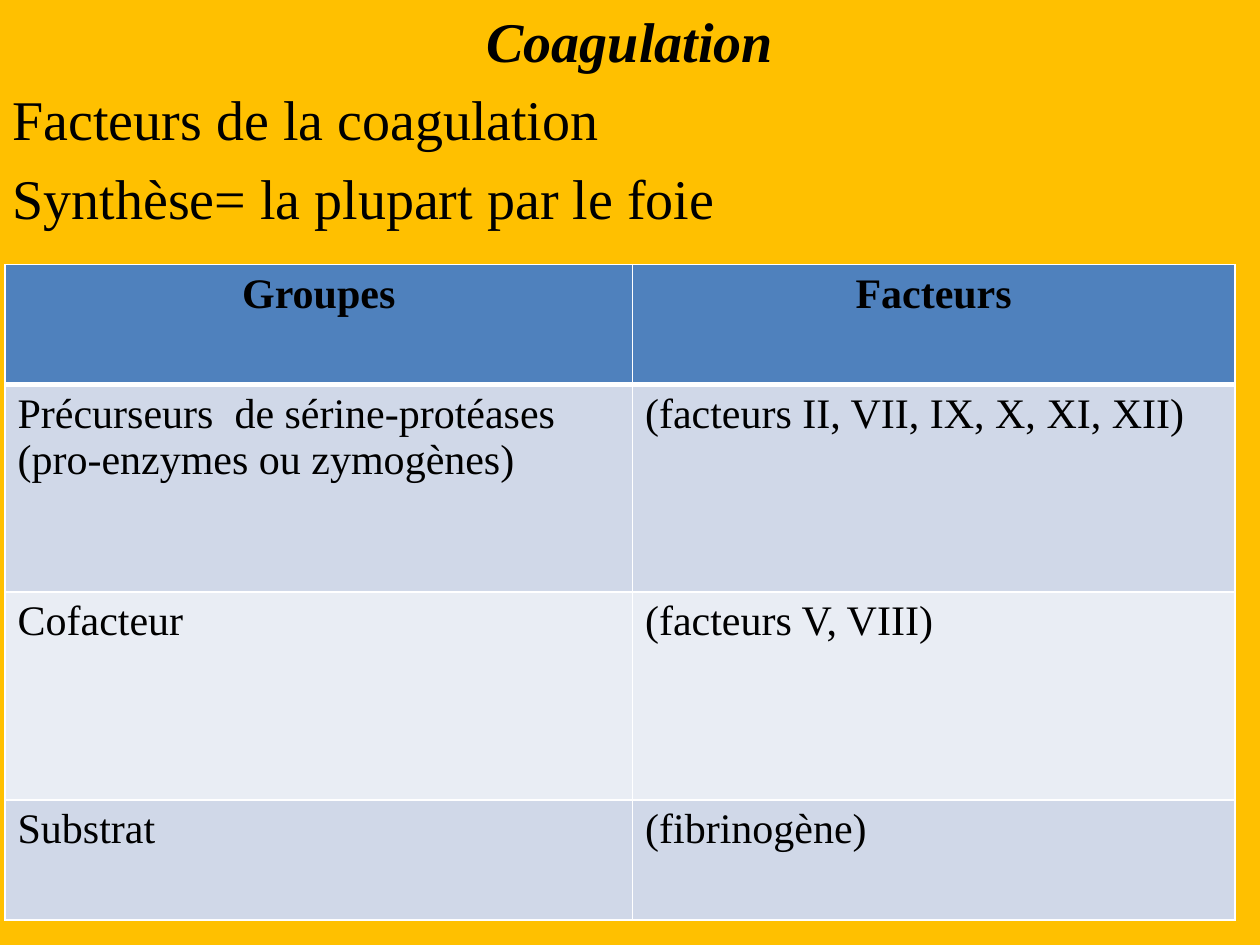
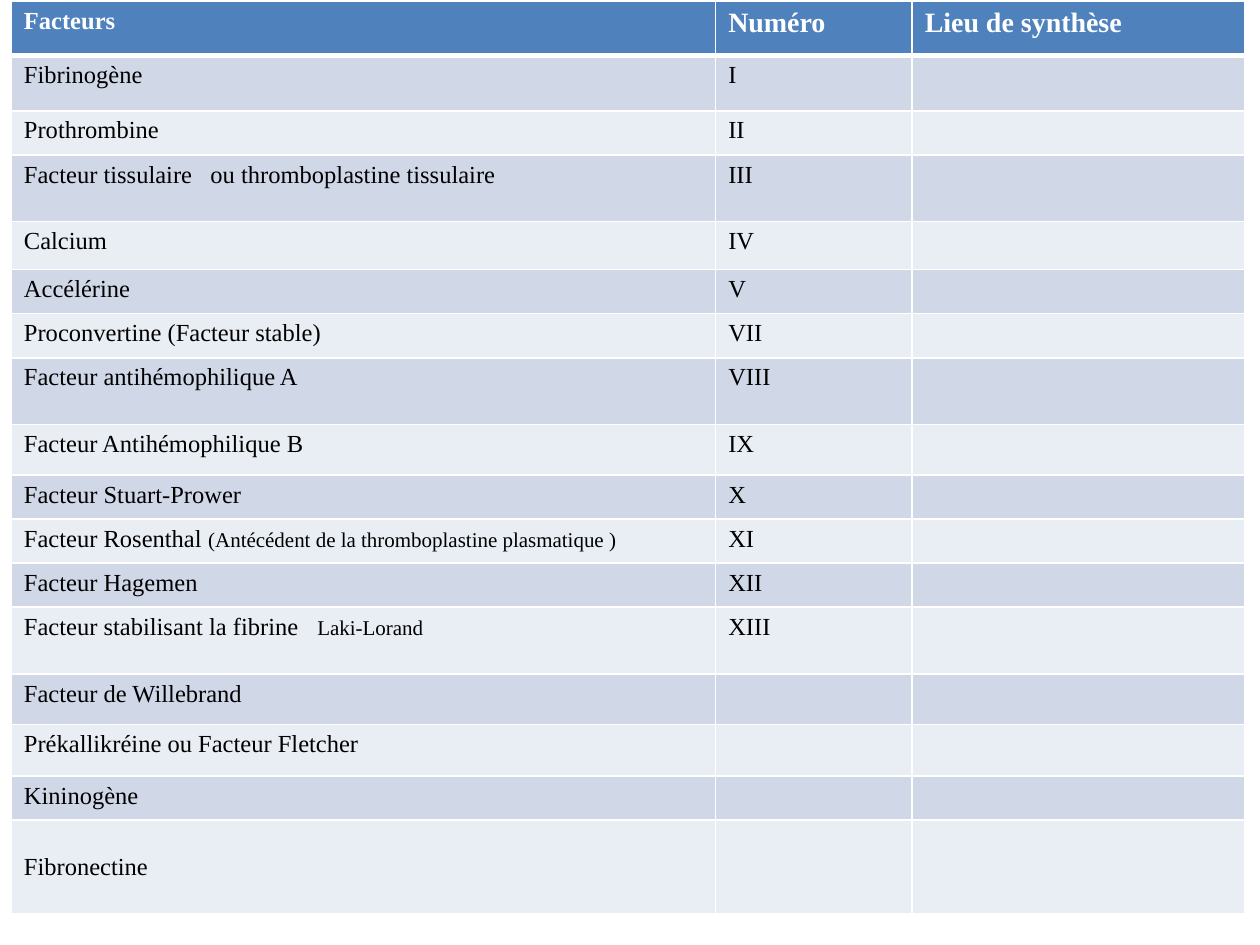
from dataclasses import dataclass

from lxml import etree
from pptx import Presentation
from pptx.dml.color import RGBColor
from pptx.enum import text
from pptx.oxml import ns
from pptx.util import Inches, Pt

# Shared style
FONT = "Times New Roman"
BLACK, WHITE, GOLD = "000000", "FFFFFF", "FFC000"
HEADER_FILL = "4F81BD"
BAND_FILLS = ("D0D8E8", "E9EDF4")
LEFT, CENTER = text.PP_ALIGN.LEFT, text.PP_ALIGN.CENTER


@dataclass(frozen=True)
class Run:
    text: str
    size: int
    bold: bool = False
    italic: bool = False
    color: str = BLACK


@dataclass(frozen=True)
class Cell:
    paragraphs: tuple[tuple[Run, ...], ...] = ()
    align: text.PP_ALIGN = LEFT
    middle: bool = False


@dataclass(frozen=True)
class TableSpec:
    left: float
    top: float
    columns: tuple[float, ...]
    row_heights: tuple[float, ...]
    rows: list[list[Cell]]


def rgb(value: str) -> RGBColor:
    return RGBColor.from_string(value)


def add_runs(paragraph, runs: tuple[Run, ...], align: text.PP_ALIGN) -> None:
    paragraph.alignment = align
    for item in runs:
        run = paragraph.add_run()
        run.text = item.text
        font = run.font
        font.name, font.size = FONT, Pt(item.size)
        font.bold, font.italic = item.bold, item.italic
        font.color.rgb = rgb(item.color)


def set_borders(cell, bottom_width: int) -> None:
    """White lines on all four sides; they come before the fill in tcPr."""
    properties = cell._tc.get_or_add_tcPr()
    widths = {"lnL": 1, "lnR": 1, "lnT": 1, "lnB": bottom_width}
    for index, (side, width) in enumerate(widths.items()):
        line = etree.Element(ns.qn(f"a:{side}"), w=str(Pt(width)))
        fill = etree.SubElement(line, ns.qn("a:solidFill"))
        etree.SubElement(fill, ns.qn("a:srgbClr"), val=WHITE)
        properties.insert(index, line)


def fill_cell(cell, content: Cell, row: int) -> None:
    cell.fill.solid()
    cell.fill.fore_color.rgb = rgb(BAND_FILLS[(row - 1) % 2] if row else HEADER_FILL)
    # The row below a header starts on a thick line
    set_borders(cell, 1 if row else 3)
    if content.middle:
        cell.vertical_anchor = text.MSO_ANCHOR.MIDDLE
    frame = cell.text_frame
    for index, runs in enumerate(content.paragraphs):
        paragraph = frame.add_paragraph() if index else frame.paragraphs[0]
        add_runs(paragraph, runs, content.align)
    if not content.paragraphs:
        # Small text size keeps an empty cell from stretching its row
        etree.SubElement(frame.paragraphs[0]._p, ns.qn("a:endParaRPr"), sz="1400")


def add_table(slide, spec: TableSpec) -> None:
    frame = slide.shapes.add_table(
        len(spec.rows), len(spec.columns), Inches(spec.left), Inches(spec.top),
        Inches(sum(spec.columns)), Inches(sum(spec.row_heights)))
    table = frame.table
    for column, width in zip(table.columns, spec.columns):
        column.width = Inches(width)
    for row, height in zip(table.rows, spec.row_heights):
        row.height = Inches(height)
    for row_index, row in enumerate(spec.rows):
        for column_index, content in enumerate(row):
            fill_cell(table.cell(row_index, column_index), content, row_index)


# Slide 1: groups of coagulation factors
INTRODUCTION = (
    (Run("Coagulation", 32, bold=True, italic=True), CENTER),
    (Run("Facteurs de la coagulation", 32), LEFT),
    (Run("Synthèse= la plupart par le foie", 32), LEFT),
)
GROUPS = (
    (("Précurseurs  de sérine-protéases", "(pro-enzymes ou zymogènes)"),
     ("(facteurs II, VII, IX, X, XI, XII)",)),
    (("Cofacteur",), ("(facteurs V, VIII)",)),
    (("Substrat",), ("(fibrinogène)",)),
)


def build_groups_slide(presentation) -> None:
    slide = presentation.slides.add_slide(presentation.slide_layouts[1])
    title = slide.shapes.title
    title.element.getparent().remove(title.element)

    # Body list on a full-slide gold ground
    body = slide.placeholders[1]
    body.left, body.top = Inches(0), Inches(0)
    body.width, body.height = presentation.slide_width, presentation.slide_height
    body.fill.solid()
    body.fill.fore_color.rgb = rgb(GOLD)
    frame = body.text_frame
    frame.auto_size = text.MSO_AUTO_SIZE.NONE
    for index, (run, align) in enumerate(INTRODUCTION):
        paragraph = frame.add_paragraph() if index else frame.paragraphs[0]
        add_runs(paragraph, (run,), align)
        properties = paragraph._p.get_or_add_pPr()
        properties.set("marL", "0")
        properties.set("indent", "0")
        etree.SubElement(properties, ns.qn("a:buNone"))

    # Table of groups
    header = [Cell(((Run(label, 24, bold=True),),), CENTER)
              for label in ("Groupes", "Facteurs")]
    rows = [[Cell(tuple((Run(line, 24),) for line in lines)) for lines in group]
            for group in GROUPS]
    add_table(slide, TableSpec(0.04, 2.1, (4.98, 4.78), (0.95, 1.65, 1.65, 0.95),
                               [header, *rows]))


# Slide 2: factor name, small remark, number, row height
FACTORS = (
    ("Fibrinogène", "", "I", 0.44),
    ("Prothrombine", "", "II", 0.35),
    ("Facteur tissulaire   ou thromboplastine tissulaire", "", "III", 0.53),
    ("Calcium", "", "IV", 0.38),
    ("Accélérine", "", "V", 0.35),
    ("Proconvertine (Facteur stable)", "", "VII", 0.35),
    ("Facteur antihémophilique A", "", "VIII", 0.53),
    ("Facteur Antihémophilique B", "", "IX", 0.4),
    ("Facteur Stuart-Prower", "", "X", 0.35),
    ("Facteur Rosenthal ", "(Antécédent de la thromboplastine plasmatique )", "XI", 0.35),
    ("Facteur Hagemen", "", "XII", 0.35),
    ("Facteur stabilisant la fibrine   ", "Laki-Lorand", "XIII", 0.53),
    ("Facteur de Willebrand", "", "", 0.4),
    ("Prékallikréine ou Facteur Fletcher", "", "", 0.41),
    ("Kininogène", "", "", 0.35),
    ("Fibronectine", "", "", 0.74),
)


def factor_row(name: str, remark: str, number: str) -> list[Cell]:
    runs = (Run(name, 14),) + ((Run(remark, 12),) if remark else ())
    number_cell = Cell(((Run(number, 14),),)) if number else Cell()
    return [Cell((runs,), middle=name == "Fibronectine"), number_cell, Cell()]


def build_factors_slide(presentation) -> None:
    slide = presentation.slides.add_slide(presentation.slide_layouts[6])
    labels = (("Facteurs", 14), ("Numéro", 16), ("Lieu de synthèse", 16))
    header = [Cell(((Run(label, size, bold=True, color=WHITE),),))
              for label, size in labels]
    rows = [factor_row(name, remark, number) for name, remark, number, _ in FACTORS]
    heights = (0.43, *(height for *_, height in FACTORS))
    add_table(slide, TableSpec(0.09, 0.01, (5.59, 1.56, 2.64), heights,
                               [header, *rows]))


def main() -> None:
    presentation = Presentation()
    presentation.slide_width, presentation.slide_height = Inches(10), Inches(7.5)
    build_groups_slide(presentation)
    build_factors_slide(presentation)
    presentation.save("out.pptx")


if __name__ == "__main__":
    main()
